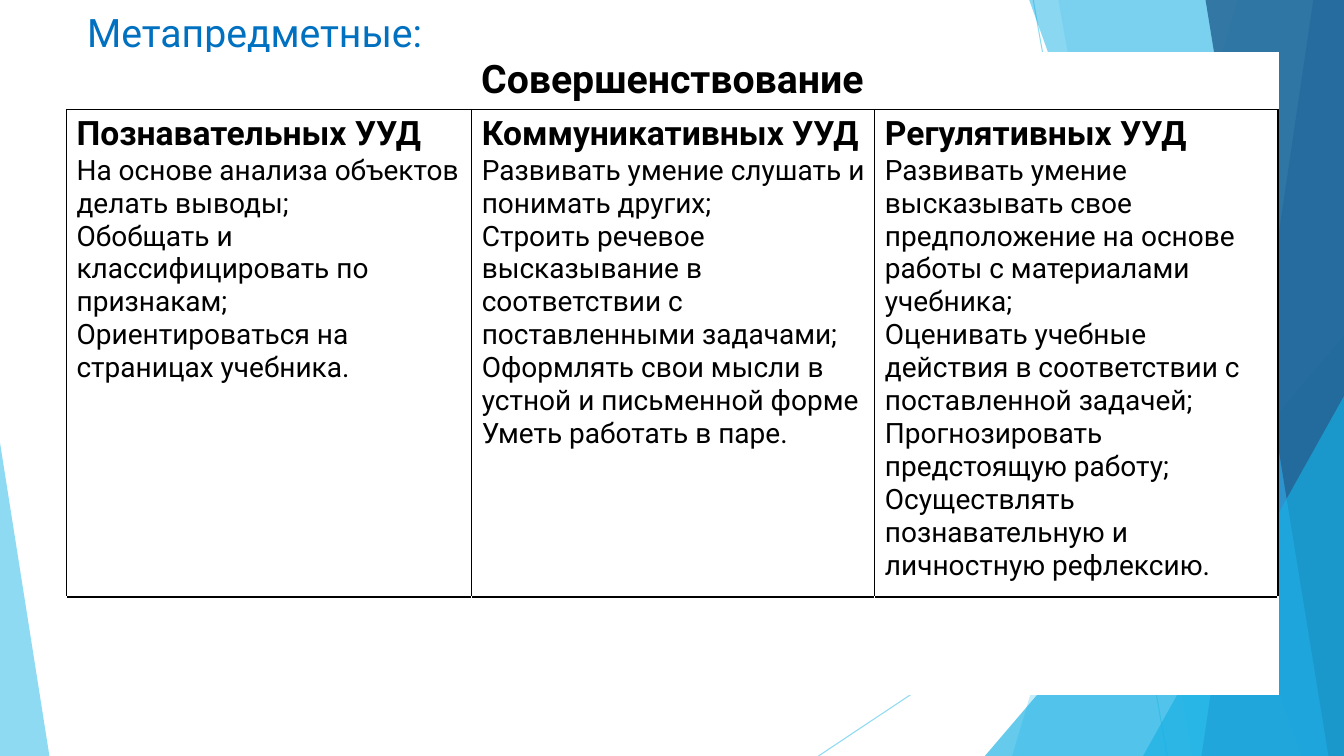
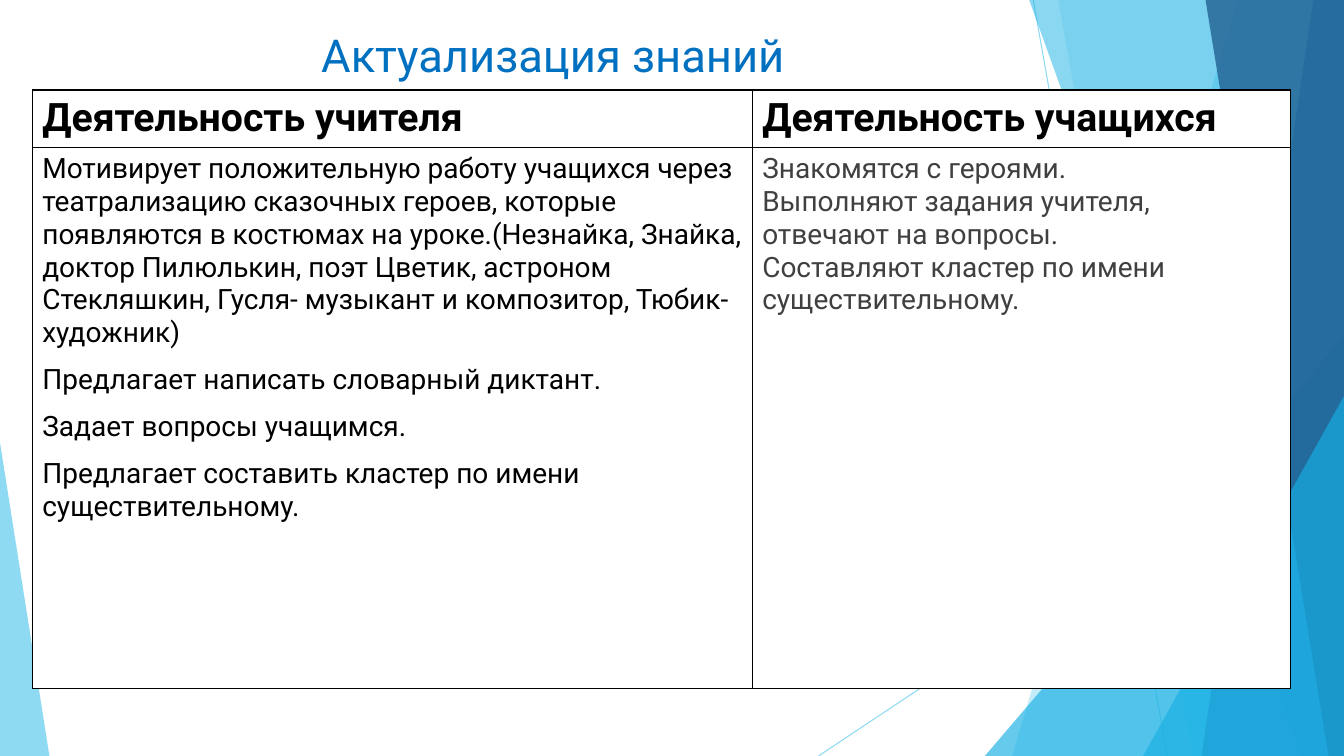
from lxml import etree
from pptx import Presentation
from pptx.dml.color import RGBColor
from pptx.enum.shapes import MSO_CONNECTOR, MSO_SHAPE
from pptx.enum.text import PP_ALIGN
from pptx.oxml.ns import qn
from pptx.util import Emu, Inches, Pt

LEFT, CENTER = PP_ALIGN.LEFT, PP_ALIGN.CENTER
STRAIGHT, TRIANGLE = MSO_CONNECTOR.STRAIGHT, MSO_SHAPE.ISOSCELES_TRIANGLE
W, H = Inches(13.333), Inches(7.5)
FONT = "Roboto"
COLORS = {
    "sky": "5FCBEF", "cyan": "17B0E4", "blue": "2E83C3", "navy": "226292",
    "title": "0070C0", "black": "000000", "gray": "404040", "white": "FFFFFF",
}
BLACK_BOX = dict.fromkeys("LRTB", "black")
WHITE_BOX = dict.fromkeys("LRTB", "white")

SKILLS = [
    ["Познавательных УУД",
     "На основе анализа объектов делать выводы;",
     "Обобщать и классифицировать по признакам;",
     "Ориентироваться на страницах учебника."],
    ["Коммуникативных УУД",
     "Развивать умение слушать и понимать других;",
     "Строить речевое высказывание в соответствии с поставленными задачами;",
     "Оформлять свои мысли в устной и письменной форме",
     "Уметь работать в паре."],
    ["Регулятивных УУД",
     "Развивать умение высказывать свое предположение на основе работы с "
     "материалами учебника;",
     "Оценивать учебные действия в соответствии с поставленной задачей;",
     "Прогнозировать предстоящую работу;",
     "Осуществлять познавательную и личностную рефлексию."],
]
TEACHER = [
    "Мотивирует положительную работу учащихся через театрализацию сказочных "
    "героев, которые появляются в костюмах на уроке.(Незнайка, Знайка, доктор "
    "Пилюлькин, поэт Цветик, астроном Стекляшкин, Гусля- музыкант и "
    "композитор, Тюбик- художник)",
    "Предлагает написать словарный диктант.",
    "Задает вопросы учащимся.",
    "Предлагает составить кластер по имени существительному.",
]
PUPILS = [
    "Знакомятся с героями.",
    "Выполняют задания учителя, отвечают на вопросы.",
    "Составляют кластер по имени существительному.",
]


def x(share):
    """Turn a percentage of the slide width into a length."""
    return Emu(int(W * share / 100))


def y(share):
    """Turn a percentage of the slide height into a length."""
    return Emu(int(H * share / 100))


def rgb(name):
    """Look up a palette colour."""
    return RGBColor.from_string(COLORS[name])


def set_alpha(sp, alpha):
    """Make the colours of a shape partly transparent."""
    for clr in sp.element.spPr.iter(qn("a:srgbClr")):
        etree.SubElement(clr, qn("a:alpha"), val=str(alpha * 1000))


def paint(sp, color, alpha):
    """Give a shape a translucent fill without outline or shadow."""
    sp.shadow.inherit = False
    sp.fill.solid()
    sp.fill.fore_color.rgb = rgb(color)
    sp.line.fill.background()
    set_alpha(sp, alpha)


def add_ray(s, x1, y1, x2, y2):
    """Draw a thin translucent line."""
    ray = s.shapes.add_connector(STRAIGHT, x(x1), y(y1), x(x2), y(y2))
    ray.line.color.rgb = rgb("sky")
    ray.line.width = Pt(0.75)
    set_alpha(ray, 70)
    etree.SubElement(ray.element.spPr, qn("a:effectLst"))


def add_band(s, top, bottom, color, alpha):
    """Draw a full-height band from a slanted left edge to the slide's right."""
    builder = s.shapes.build_freeform(x(top), 0)
    builder.add_line_segments([(W, 0), (W, H), (x(bottom), H)], close=True)
    paint(builder.convert_to_shape(), color, alpha)


def add_triangle(s, left, top, width, apex, color, alpha):
    """Draw a triangle standing on the bottom edge of the slide."""
    sp = s.shapes.add_shape(TRIANGLE, x(left), y(top), x(width), y(100 - top))
    sp.adjustments[0] = apex
    paint(sp, color, alpha)


def add_backdrop(s):
    """Draw the facets that all slides share."""
    add_ray(s, 76.88, 0, 86.85, 100)
    add_ray(s, 100, 53.73, 60.9, 100)
    add_band(s, 92.1, 75.3, "sky", 36)
    add_band(s, 78.75, 88.72, "sky", 20)
    add_triangle(s, 73.28, 44.4, 26.72, 1, "cyan", 66)
    add_band(s, 76.58, 96.82, "cyan", 50)
    add_band(s, 97.72, 89.4, "blue", 70)
    add_band(s, 89.7, 98.85, "navy", 80)
    add_triangle(s, 85.05, 52.4, 14.95, 1, "cyan", 66)
    add_triangle(s, 0, 58.53, 3.68, 0, "sky", 70)


def style(p, size, color, bold=False, align=LEFT):
    """Set the font and alignment of a paragraph."""
    p.alignment = align
    p.font.name = FONT
    p.font.size = Pt(size)
    p.font.bold = bold
    p.font.color.rgb = rgb(color)


def add_title(s, text, left, top, width, size, align=LEFT):
    """Add the blue slide title."""
    tf = s.shapes.add_textbox(x(left), y(top), x(width), y(9)).text_frame
    tf.word_wrap = True
    p = tf.paragraphs[0]
    p.text = text
    style(p, size, "title", align=align)


def add_grid(s, left, top, cols, rows):
    """Add an unstyled table with the given column and row shares."""
    frame = s.shapes.add_table(len(rows), len(cols), x(left), y(top),
                               x(sum(cols)), y(sum(rows)))
    table = frame.table
    table.first_row = table.horz_banding = False
    for column, share in zip(table.columns, cols):
        column.width = x(share)
    for row, share in zip(table.rows, rows):
        row.height = y(share)
    return table


def frame_cell(cell, borders):
    """Give a cell one-point borders and a white fill."""
    tc_pr = cell._tc.get_or_add_tcPr()
    for side, color in borders.items():
        ln = etree.SubElement(tc_pr, qn(f"a:ln{side}"), w=str(Pt(1)))
        fill = etree.SubElement(ln, qn("a:solidFill"))
        etree.SubElement(fill, qn("a:srgbClr"), val=COLORS[color])
    cell.fill.solid()
    cell.fill.fore_color.rgb = rgb("white")


def fill_cell(cell, lines, head=None, color="black", align=LEFT, after=0):
    """Write paragraphs; a head size makes the first one a bold heading."""
    tf = cell.text_frame
    tf.text = "\n".join(lines)
    for i, p in enumerate(tf.paragraphs):
        heading = bool(head) and i == 0
        style(p, head if heading else 20, color, heading, align)
        p.space_after = Pt(after)


def add_skills_slide(prs):
    """Build the slide on the three groups of skills."""
    s = prs.slides.add_slide(prs.slide_layouts[6])
    add_backdrop(s)
    add_title(s, "Метапредметные:", 5.75, 0.4, 70, 28)
    table = add_grid(s, 4.95, 6.93, [30.15, 30, 30], [7.36, 63.2, 6.9, 5.93])
    row_borders = [WHITE_BOX | {"B": "black"}, BLACK_BOX,
                   WHITE_BOX | {"T": "black"}, WHITE_BOX]
    for r, borders in enumerate(row_borders):
        for c in range(len(SKILLS)):
            frame_cell(table.cell(r, c), borders)
    table.cell(0, 0).merge(table.cell(0, 2))
    fill_cell(table.cell(0, 0), ["Совершенствование"], 28, align=CENTER)
    for c, lines in enumerate(SKILLS):
        fill_cell(table.cell(1, c), lines, 24)


def add_activity_slide(prs):
    """Build the slide on what teacher and pupils do."""
    s = prs.slides.add_slide(prs.slide_layouts[6])
    add_backdrop(s)
    add_title(s, "Актуализация знаний", 6.15, 2.9, 70, 32.4, CENTER)
    table = add_grid(s, 2.4, 11.9, [53.57, 40.03], [7.41, 71.56])
    for cell in table.iter_cells():
        frame_cell(cell, BLACK_BOX)
    for c, heading in enumerate(["Деятельность учителя", "Деятельность учащихся"]):
        fill_cell(table.cell(0, c), [heading], 28)
    fill_cell(table.cell(1, 0), TEACHER, after=10)
    fill_cell(table.cell(1, 1), PUPILS, color="gray")


def main():
    """Create the presentation."""
    prs = Presentation()
    prs.slide_width, prs.slide_height = W, H
    add_skills_slide(prs)
    add_activity_slide(prs)
    prs.save("out.pptx")


if __name__ == "__main__":
    main()
